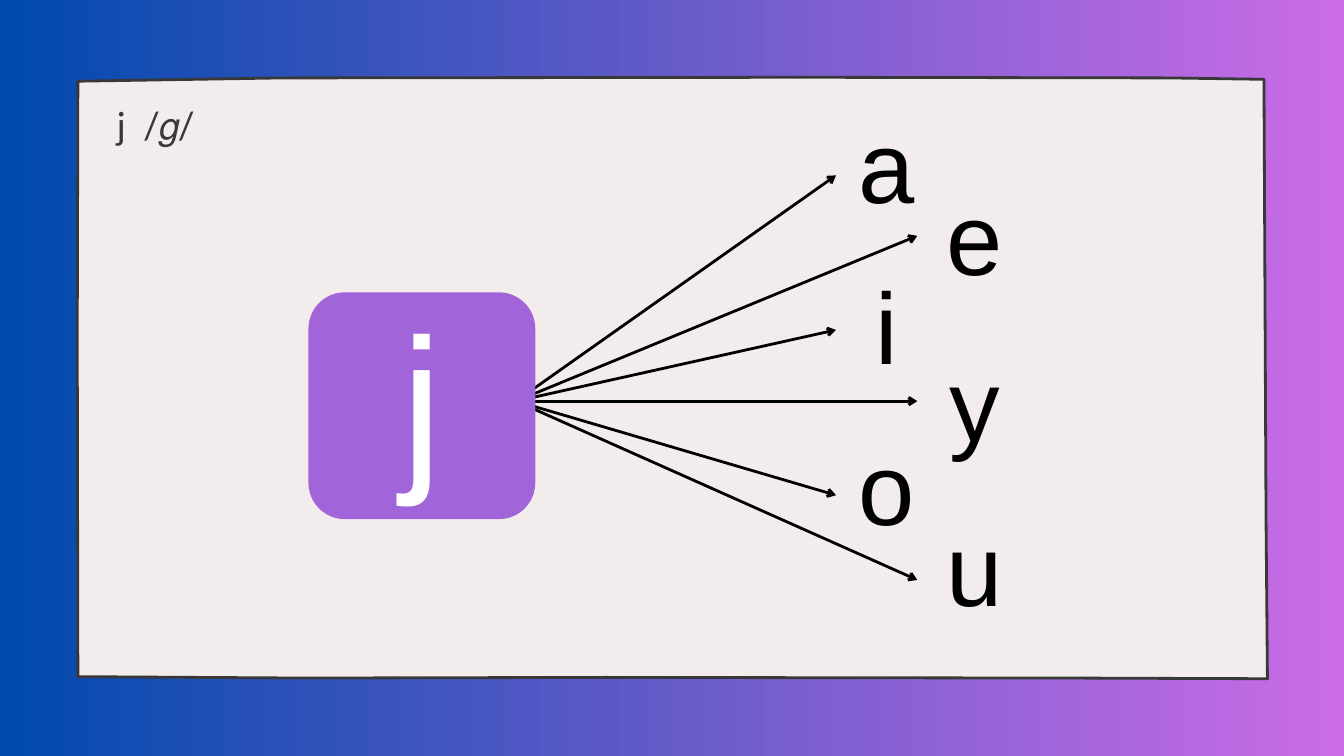
"""Build the slide that joins the letter j to each vowel."""
from lxml import etree
from pptx import Presentation
from pptx import util as u
from pptx.dml.color import RGBColor
from pptx.enum import shapes, text
from pptx.oxml.ns import qn

BLUE = RGBColor(0x00, 0x4A, 0xAD)
PINK = RGBColor(0xCB, 0x6C, 0xE6)
PAPER = RGBColor(0xF2, 0xED, 0xEC)
INK = RGBColor(0x39, 0x38, 0x39)
PURPLE = RGBColor(0xA1, 0x64, 0xD9)
BLACK = RGBColor(0x00, 0x00, 0x00)
WHITE = RGBColor(0xFF, 0xFF, 0xFF)

PANEL_OUTLINE = [
    (1354.3, 85), (1356.5, 554), (1358, 727.2), (1150, 726.5),
    (648, 725.8), (324, 726.5), (83.5, 725), (82.8, 360),
    (83.5, 87), (302, 83.5), (864, 82.8), (1253, 83.5),
]
ARROW_START = (553, 429.8)
COLUMNS = [(950.4, 895.7), (1044.7, 982.8)]
VOWELS = [
    ("a", 88.6, 187.9), ("e", 165.6, 252.7), ("i", 260.6, 353.5),
    ("y", 342.7, 429.8), ("o", 432.7, 530.6), ("u", 519.8, 621.4),
]


def set_text(shape, wording, alignment, spacing, font_name, size, color):
    frame = shape.text_frame
    frame.margin_left = frame.margin_right = 0
    frame.margin_top = frame.margin_bottom = 0
    frame.word_wrap = True
    frame.auto_size = text.MSO_AUTO_SIZE.NONE
    frame.vertical_anchor = text.MSO_ANCHOR.TOP
    frame.text = wording
    paragraph = frame.paragraphs[0]
    paragraph.alignment = alignment
    paragraph.line_spacing = u.Pt(spacing)
    for run in paragraph.runs:
        run.font.name = font_name
        run.font.size = u.Pt(size)
        run.font.color.rgb = color
    return paragraph


def add_letter(slide, letter, center, top, width, height, spacing, size, color):
    box = slide.shapes.add_textbox(
        u.Pt(center - width / 2), u.Pt(top), u.Pt(width), u.Pt(height))
    set_text(box, letter, text.PP_ALIGN.CENTER, spacing, "Arial", size, color)


presentation = Presentation()
presentation.slide_width = u.Pt(1440)
presentation.slide_height = u.Pt(810)
slide = presentation.slides.add_slide(presentation.slide_layouts[5])

background = slide.background.fill
background.gradient()
background.gradient_angle = 0
for stop, position, color in zip(background.gradient_stops, (0, 1), (BLUE, PINK)):
    stop.position = position
    stop.color.rgb = color

outline = [(u.Pt(x), u.Pt(y)) for x, y in PANEL_OUTLINE]
builder = slide.shapes.build_freeform(*outline[0])
builder.add_line_segments(outline[1:], close=True)
panel = builder.convert_to_shape()
panel.shadow.inherit = False
panel.fill.solid()
panel.fill.fore_color.rgb = PAPER
panel.line.color.rgb = INK
panel.line.width = u.Pt(3)

for index, (vowel, top, arrow_y) in enumerate(VOWELS):
    center, arrow_x = COLUMNS[index % 2]
    arrow = slide.shapes.add_connector(
        shapes.MSO_CONNECTOR.STRAIGHT, u.Pt(ARROW_START[0]),
        u.Pt(ARROW_START[1]), u.Pt(arrow_x), u.Pt(arrow_y))
    arrow.line.color.rgb = BLACK
    arrow.line.width = u.Pt(3)
    etree.SubElement(arrow.line._get_or_add_ln(), qn("a:tailEnd"), type="arrow")
    etree.SubElement(arrow.element.spPr, qn("a:effectLst"))
    add_letter(slide, vowel, center, top, 66, 149, 151.6, 108.3, BLACK)

block = slide.shapes.add_shape(
    shapes.MSO_SHAPE.ROUNDED_RECTANGLE,
    u.Pt(330.5), u.Pt(313.2), u.Pt(243), u.Pt(243))
block.adjustments[0] = 0.16
block.shadow.inherit = False
block.fill.solid()
block.fill.fore_color.rgb = PURPLE
block.line.fill.background()
add_letter(slide, "j", 451.8, 263.5, 204, 264, 278, 198.5, WHITE)

title = slide.shapes.title
title.left, title.top = u.Pt(125.3), u.Pt(109.4)
title.width, title.height = u.Pt(448.6), u.Pt(46.8)
heading = set_text(title, "j\t/𝑔/", text.PP_ALIGN.LEFT, 48, "Lato", 40, INK)
tabs = etree.SubElement(heading._p.get_or_add_pPr(), qn("a:tabLst"))
etree.SubElement(tabs, qn("a:tab"), pos=str(u.Pt(28)), algn="l")
for run in heading.runs:
    run.font._element.set("spc", "-140")
title.element.getparent().append(title.element)

presentation.save("out.pptx")
